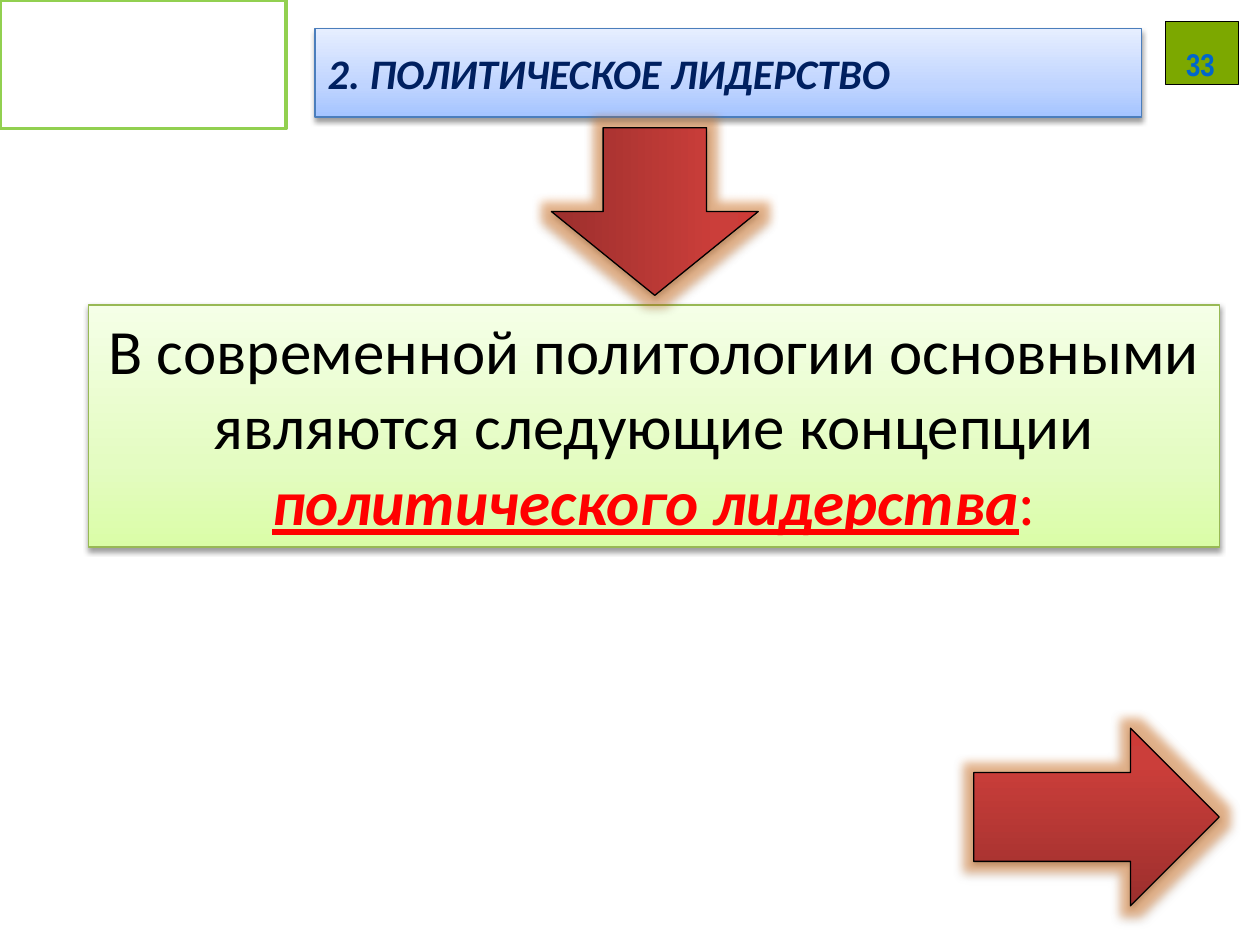
"""Build the slide that introduces the concepts of political leadership."""
from copy import deepcopy

from pptx import Presentation
from pptx.dml.color import RGBColor as Rgb
from pptx.enum.shapes import MSO_SHAPE as Shape
from pptx.enum.text import MSO_ANCHOR as Anchor, MSO_AUTO_SIZE as AutoSize, PP_ALIGN as Align
from pptx.oxml import parse_xml
from pptx.oxml.ns import nsdecls, qn
from pptx.util import Cm, Pt

COLORS = {
    "black": "000000", "red": "FF0000", "navy": "002060", "number": "0066CC",
    "frame": "92D050", "badge": "7CA800", "green line": "98B955",
    "blue line": "4B7EBC", "glow": "E46C0A",
}
GRADIENTS = {
    "green": {0: "DAFDA7", 0.35: "E4FCC2", 1: "F5FFE7"},
    "blue": {0: "A4C4FF", 0.35: "BFD4FF", 1: "E6EEFF"},
    "red": {0: "9C2F2D", 0.8: "CB3E3A", 1: "CE3B37"},
}


def style_panel(shape, gradient, line, alpha, glow=""):
    """Give a shape a three-stop gradient, a thin line and a soft shadow."""
    shape.fill.gradient()
    shape.fill.gradient_angle = 90
    stop_list = shape.element.spPr.find(qn("a:gradFill")).find(qn("a:gsLst"))
    stop_list.append(deepcopy(stop_list[0]))
    for stop, (position, color) in zip(shape.fill.gradient_stops, GRADIENTS[gradient].items()):
        stop.position = position
        stop.color.rgb = Rgb.from_string(color)
    shape.line.color.rgb = Rgb.from_string(COLORS[line])
    shape.line.width = Pt(0.75)
    shape.element.spPr.append(parse_xml(
        f'<a:effectLst {nsdecls("a")}>{glow}'
        f'<a:outerShdw blurRad="{Pt(3.1)}" dist="{Pt(1.7)}" dir="5400000" rotWithShape="0">'
        f'<a:srgbClr val="{COLORS["black"]}"><a:alpha val="{alpha * 1000}"/></a:srgbClr>'
        "</a:outerShdw></a:effectLst>"))


def write_text(shape, spans, align, anchor, wrap=True):
    """Write one paragraph of formatted spans into a shape."""
    frame = shape.text_frame
    frame.auto_size = AutoSize.NONE
    frame.word_wrap = wrap
    frame.vertical_anchor = anchor
    para = frame.paragraphs[0]
    para.alignment = align
    for text, color, formats in spans:
        span = para.add_run()
        span.text = text
        span.font.color.rgb = Rgb.from_string(COLORS[color])
        for name, value in formats.items():
            setattr(span.font, name, value)


deck = Presentation()
deck.slide_width, deck.slide_height = Cm(25.4), Cm(19.05)
page = deck.slides.add_slide(deck.slide_layouts[5])

title = page.shapes.title
title.left, title.top, title.width, title.height = Cm(6.35), Cm(0.58), Cm(16.66), Cm(1.78)
title.element.spPr.append(parse_xml(
    f'<a:prstGeom {nsdecls("a")} prst="homePlate"><a:avLst/></a:prstGeom>'))
style_panel(title, "blue", "blue line", 38)
title_format = {"name": "Calibri", "size": Pt(24), "bold": True, "italic": True}
write_text(title, [("2. ПОЛИТИЧЕСКОЕ ЛИДЕРСТВО", "navy", title_format)], Align.LEFT, Anchor.MIDDLE)

statement = page.shapes.add_shape(Shape.RECTANGLE, Cm(1.78), Cm(6.15), Cm(22.81), Cm(4.88))
style_panel(statement, "green", "green line", 38)
plain = {"name": "Calibri", "size": Pt(36)}
strong = {**plain, "bold": True, "italic": True, "underline": True}
write_text(statement, [
    ("В современной политологии основными являются следующие концепции ", "black", plain),
    ("политического лидерства", "red", strong),
    (":", "red", plain),
], Align.CENTER, Anchor.TOP)

frame_box = page.shapes.add_shape(Shape.RECTANGLE, 0, 0, Cm(5.77), Cm(2.59))
frame_box.fill.background()
badge = page.shapes.add_shape(Shape.RECTANGLE, Cm(23.5), Cm(0.43), Cm(1.47), Cm(1.27))
badge.fill.solid()
badge.fill.fore_color.rgb = Rgb.from_string(COLORS["badge"])
for box, color, width in ((frame_box, "frame", 2), (badge, "black", 0.75)):
    box.shadow.inherit = False
    box.line.color.rgb = Rgb.from_string(COLORS[color])
    box.line.width = Pt(width)

number = page.shapes.add_textbox(Cm(23.83), Cm(0.79), Cm(0.74), Cm(0.58))
number_format = {"name": "Arial Narrow", "size": Pt(18), "bold": True}
write_text(number, [("33", "number", number_format)], Align.CENTER, Anchor.TOP, wrap=False)

arrow_glow = (f'<a:glow rad="{Pt(11)}"><a:srgbClr val="{COLORS["glow"]}">'
              '<a:alpha val="40000"/></a:srgbClr></a:glow>')
for left, top, width, height, rotation in (
    (11.51, 2.18, 3.38, 4.17, 90),
    (19.63, 14.68, 4.95, 3.58, 0),
):
    arrow = page.shapes.add_shape(Shape.RIGHT_ARROW, Cm(left), Cm(top), Cm(width), Cm(height))
    arrow.rotation = rotation
    style_panel(arrow, "red", "black", 35, arrow_glow)

deck.save("out.pptx")
